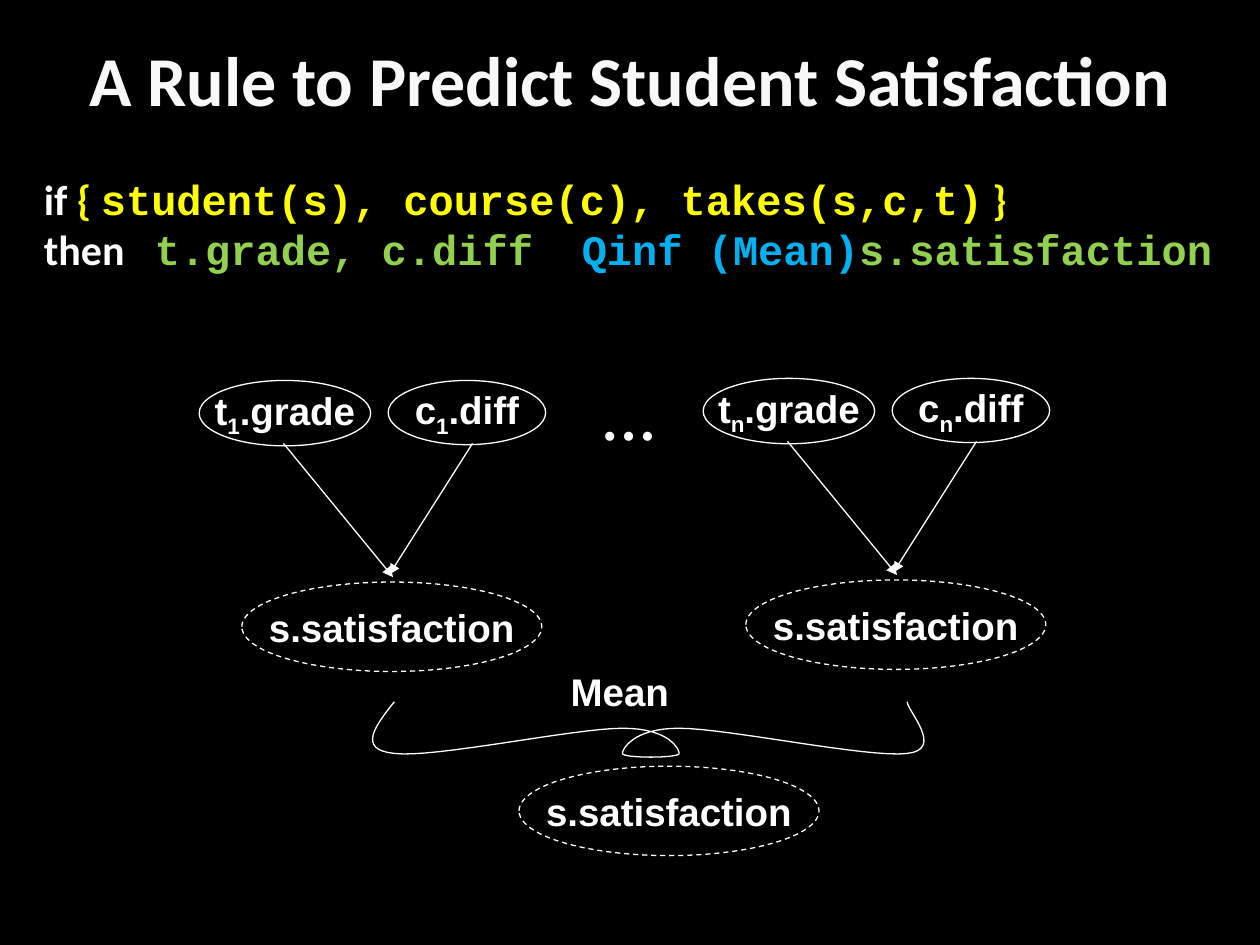
from typing import NamedTuple

from lxml.etree import SubElement
from pptx import Presentation
from pptx.dml.color import RGBColor
from pptx.enum.dml import MSO_LINE
from pptx.enum.shapes import MSO_CONNECTOR, MSO_SHAPE
from pptx.enum.text import MSO_ANCHOR, PP_ALIGN
from pptx.oxml.ns import qn
from pptx.util import Pt

BLACK = RGBColor(0x00, 0x00, 0x00)
WHITE = RGBColor(0xFF, 0xFF, 0xFF)
OFF_WHITE = RGBColor(0xF8, 0xF8, 0xF8)
YELLOW = RGBColor(0xFF, 0xFF, 0x00)
GREEN = RGBColor(0x92, 0xD0, 0x50)
BLUE = RGBColor(0x00, 0xB0, 0xF0)
LINE_WIDTH = Pt(0.75)


class Box(NamedTuple):
    left: float
    top: float
    width: float
    height: float

    def shifted(self, across: float, down: float) -> "Box":
        return Box(self.left + across, self.top + down, self.width, self.height)

    def lengths(self) -> list:
        return [Pt(value) for value in self]


class Piece(NamedTuple):
    text: str
    font: str = "Arial"
    size: float = 22
    color: RGBColor = WHITE
    baseline: int = 0


class Arrow(NamedTuple):
    start_x: float
    start_y: float
    end_x: float
    end_y: float


class Network(NamedTuple):
    index: str
    across: float
    down: float


GRADE = Box(113.8, 217.4, 98, 37.4)
DIFFICULTY = Box(221.8, 217.4, 90, 36.7)
SATISFACTION = Box(138.2, 332.6, 171.4, 51.1)
COMBINED = Box(296.6, 437.8, 171.4, 51.1)
ARROWS = [Arrow(162, 253.4, 224.6, 329.8), Arrow(270, 253.4, 222.5, 328.3)]
NETWORKS = [Network("1", 0, 0), Network("n", 288, -1.2)]

RULE = [
    [
        Piece("if ", "Calibri", 24),
        Piece("{ ", "Calibri", 24, YELLOW),
        Piece("student(s), course(c), takes(s,c,t)", "Courier New", 24, YELLOW),
        Piece(" }", "Calibri", 24, YELLOW),
    ],
    [
        Piece("then\t", "Calibri", 24),
        Piece("t.grade, c.diff\t", "Courier New", 24, GREEN),
        Piece("Qinf (Mean)", "Courier New", 24, BLUE),
        Piece("s.satisfaction", "Courier New", 24, GREEN),
    ],
]
RULE_TABS = [63.4, 307.4]

BRACE_START = (225.4, 401)
BRACE_CURVES = [
    [(214.6, 414.7), (203.8, 428.4), (225.4, 430.6)],
    [(247.7, 433.4), (328.3, 416.2), (355.7, 416.2)],
    [(383, 416.2), (388.1, 428.4), (388.1, 430.6)],
    [(388.1, 433.4), (355.7, 433.4), (355.7, 430.6)],
    [(355.7, 428.4), (361.4, 416.2), (388.1, 416.2)],
    [(415.4, 416.2), (496.8, 433.4), (518.4, 430.6)],
    [(540, 428.4), (518.4, 406.1), (518.4, 401)],
]
CURVE_STEPS = 16


def write_pieces(paragraph, pieces: list[Piece]) -> None:
    for piece in pieces:
        run = paragraph.add_run()
        run.text = piece.text
        run.font.name = piece.font
        run.font.size = Pt(piece.size)
        run.font.bold = True
        run.font.color.rgb = piece.color
        if piece.baseline:
            run.font._element.set("baseline", str(piece.baseline))


def set_tabs(paragraph, positions: list[float]) -> None:
    tab_list = SubElement(paragraph._p.get_or_add_pPr(), qn("a:tabLst"))
    for position in positions:
        SubElement(tab_list, qn("a:tab"), pos=str(Pt(position)), algn="l")


def add_text(slide, box: Box, pieces: list[Piece], wrap: bool = False):
    shape = slide.shapes.add_textbox(*box.lengths())
    shape.text_frame.word_wrap = wrap
    write_pieces(shape.text_frame.paragraphs[0], pieces)
    return shape


def add_node(slide, box: Box, pieces: list[Piece], dashed: bool = False) -> None:
    shape = slide.shapes.add_shape(MSO_SHAPE.OVAL, *box.lengths())
    shape.shadow.inherit = False
    shape.fill.background()
    shape.line.color.rgb = WHITE
    shape.line.width = LINE_WIDTH
    if dashed:
        shape.line.dash_style = MSO_LINE.DASH
    text_frame = shape.text_frame
    text_frame.word_wrap = False
    text_frame.vertical_anchor = MSO_ANCHOR.MIDDLE
    text_frame.paragraphs[0].alignment = PP_ALIGN.CENTER
    write_pieces(text_frame.paragraphs[0], pieces)


def add_arrow(slide, arrow: Arrow, across: float, down: float) -> None:
    connector = slide.shapes.add_connector(
        MSO_CONNECTOR.STRAIGHT,
        Pt(arrow.start_x + across), Pt(arrow.start_y + down),
        Pt(arrow.end_x + across), Pt(arrow.end_y + down),
    )
    connector.line.color.rgb = WHITE
    connector.line.width = LINE_WIDTH
    SubElement(connector.line._get_or_add_ln(), qn("a:tailEnd"), type="triangle")
    SubElement(connector._element.spPr, qn("a:effectLst"))


def add_network(slide, network: Network) -> None:
    shift = (network.across, network.down)
    subscript = Piece(network.index, baseline=-25000)
    add_node(slide, GRADE.shifted(*shift), [Piece("t"), subscript, Piece(".grade")])
    add_node(slide, DIFFICULTY.shifted(*shift), [Piece("c"), subscript, Piece(".diff")])
    add_node(slide, SATISFACTION.shifted(*shift), [Piece("s.satisfaction")], dashed=True)
    for arrow in ARROWS:
        add_arrow(slide, arrow, *shift)


def curve_point(points: list[tuple], t: float) -> tuple:
    weights = [(1 - t) ** 3, 3 * t * (1 - t) ** 2, 3 * t * t * (1 - t), t ** 3]
    return tuple(
        Pt(sum(weight * point[axis] for weight, point in zip(weights, points)))
        for axis in range(2)
    )


def add_brace(slide) -> None:
    start = BRACE_START
    vertices = []
    for curve in BRACE_CURVES:
        points = [start, *curve]
        vertices += [curve_point(points, step / CURVE_STEPS) for step in range(1, CURVE_STEPS + 1)]
        start = curve[-1]
    builder = slide.shapes.build_freeform(Pt(BRACE_START[0]), Pt(BRACE_START[1]))
    builder.add_line_segments(vertices, close=False)
    shape = builder.convert_to_shape()
    shape.shadow.inherit = False
    shape.fill.background()
    shape.line.color.rgb = WHITE
    shape.line.width = LINE_WIDTH


def main() -> None:
    presentation = Presentation()
    presentation.slide_width = Pt(720)
    presentation.slide_height = Pt(540)
    slide = presentation.slides.add_slide(presentation.slide_layouts[6])
    slide.background.fill.solid()
    slide.background.fill.fore_color.rgb = BLACK

    title_piece = Piece("A Rule to Predict Student Satisfaction", "Calibri", 40, OFF_WHITE)
    title = add_text(slide, Box(36, 0, 648, 90), [title_piece], wrap=True)
    title.text_frame.vertical_anchor = MSO_ANCHOR.MIDDLE
    title.text_frame.paragraphs[0].alignment = PP_ALIGN.CENTER

    rule = add_text(slide, Box(18, 95.5, 690, 94.5), RULE[0], wrap=True)
    conclusion = rule.text_frame.add_paragraph()
    write_pieces(conclusion, RULE[1])
    set_tabs(conclusion, RULE_TABS)

    for network in NETWORKS:
        add_network(slide, network)
    add_text(slide, Box(336.2, 216, 46.8, 46), [Piece("…", "Times New Roman", 32)])
    add_text(slide, Box(319, 378, 70.6, 33.8), [Piece("Mean")])
    add_brace(slide)
    add_node(slide, COMBINED, [Piece("s.satisfaction")], dashed=True)
    presentation.save("out.pptx")


if __name__ == "__main__":
    main()
